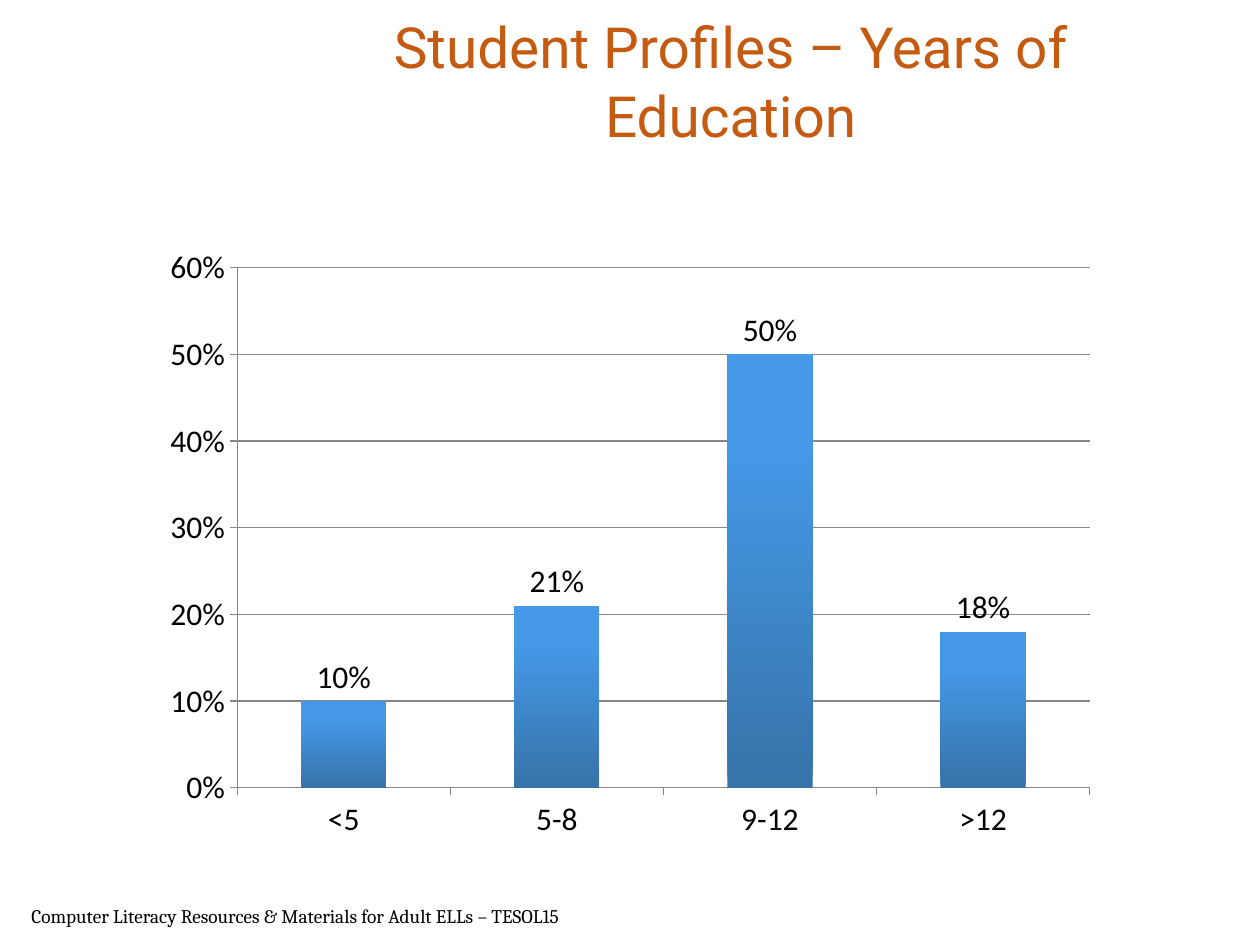
from dataclasses import dataclass

from pptx import Presentation, util as u
from pptx.chart.data import CategoryChartData
from pptx.dml.color import RGBColor
from pptx.enum import chart as ch, text


@dataclass(frozen=True)
class Theme:
    """Colours, fonts and type sizes of the slide."""
    accent: str = "C55A11"
    ink: str = "000000"
    line: str = "868686"
    bar_low: str = "3673A9"
    bar_high: str = "4599E8"
    title: tuple = ("Roboto", 32.4)
    chart: tuple = ("Calibri", 18)
    footer: tuple = ("Cambria", 11)


T = Theme()
W, H = u.Inches(10), u.Inches(7.5)


def share(x, y, w, h):
    """Turn shares of the slide's size into a box in EMU."""
    return int(x * W), int(y * H), int(w * W), int(h * H)


def style(font, face, color):
    """Apply a typeface, size and colour to a font."""
    font.name, font.size = face[0], u.Pt(face[1])
    font.color.rgb = RGBColor.from_string(color)


def draw_line(fmt):
    """Draw a thin grey chart line."""
    fmt.line.color.rgb = RGBColor.from_string(T.line)
    fmt.line.width = u.Pt(0.75)


def add_title(s, box, words):
    """Place the title placeholder, centred in its box."""
    sp = s.shapes.title
    sp.left, sp.top, sp.width, sp.height = box
    tf = sp.text_frame
    tf.text = words
    tf.word_wrap = True
    tf.auto_size = text.MSO_AUTO_SIZE.NONE
    tf.vertical_anchor = text.MSO_ANCHOR.MIDDLE
    p = tf.paragraphs[0]
    p.alignment = text.PP_ALIGN.CENTER
    style(p.runs[0].font, T.title, T.accent)


def add_education_chart(s, box, shares):
    """Add the column chart of students by years of education."""
    data = CategoryChartData(number_format="0%")
    data.categories = list(shares)
    data.add_series("Series 1", list(shares.values()))
    chart = s.shapes.add_chart(ch.XL_CHART_TYPE.COLUMN_CLUSTERED, *box, data).chart
    style(chart.font, T.chart, T.ink)
    chart.has_legend = chart.has_title = False

    for axis in (chart.category_axis, chart.value_axis):
        axis.major_tick_mark = ch.XL_TICK_MARK.OUTSIDE
        style(axis.tick_labels.font, T.chart, T.ink)
        draw_line(axis.format)
    value = chart.value_axis
    value.minimum_scale, value.maximum_scale, value.major_unit = 0, 0.6, 0.1
    value.tick_labels.number_format = "0%"
    value.tick_labels.number_format_is_linked = False
    value.has_major_gridlines = True
    draw_line(value.major_gridlines.format)

    plot = chart.plots[0]
    plot.gap_width = 150
    plot.vary_by_categories = False
    fill = plot.series[0].format.fill
    fill.gradient()
    fill.gradient_angle = 90
    for stop, color, pos in zip(fill.gradient_stops, (T.bar_low, T.bar_high), (0, 0.8)):
        stop.color.rgb = RGBColor.from_string(color)
        stop.position = pos

    labels = plot.series[0].data_labels
    labels.show_value = True
    labels.number_format, labels.number_format_is_linked = "0%", False
    labels.position = ch.XL_LABEL_POSITION.OUTSIDE_END
    style(labels.font, T.chart, T.ink)


def add_footer(s, box, words):
    """Add the footer line."""
    tf = s.shapes.add_textbox(*box).text_frame
    tf.text = words
    tf.word_wrap = True
    style(tf.paragraphs[0].runs[0].font, T.footer, T.ink)


def main():
    """Build and save the slide."""
    prs = Presentation()
    prs.slide_width, prs.slide_height = W, H
    s = prs.slides.add_slide(prs.slide_layouts[5])
    add_title(s, share(0.21, 0, 0.74, 0.17), "Student Profiles – Years of Education")
    add_education_chart(s, share(0.12, 0.25, 0.76, 0.65),
                        {"<5": 0.1, "5-8": 0.21, "9-12": 0.5, ">12": 0.18})
    add_footer(s, share(0.015, 0.95, 0.47, 0.05),
               "Computer Literacy Resources & Materials for Adult ELLs – TESOL15")
    prs.save("out.pptx")


if __name__ == "__main__":
    main()
